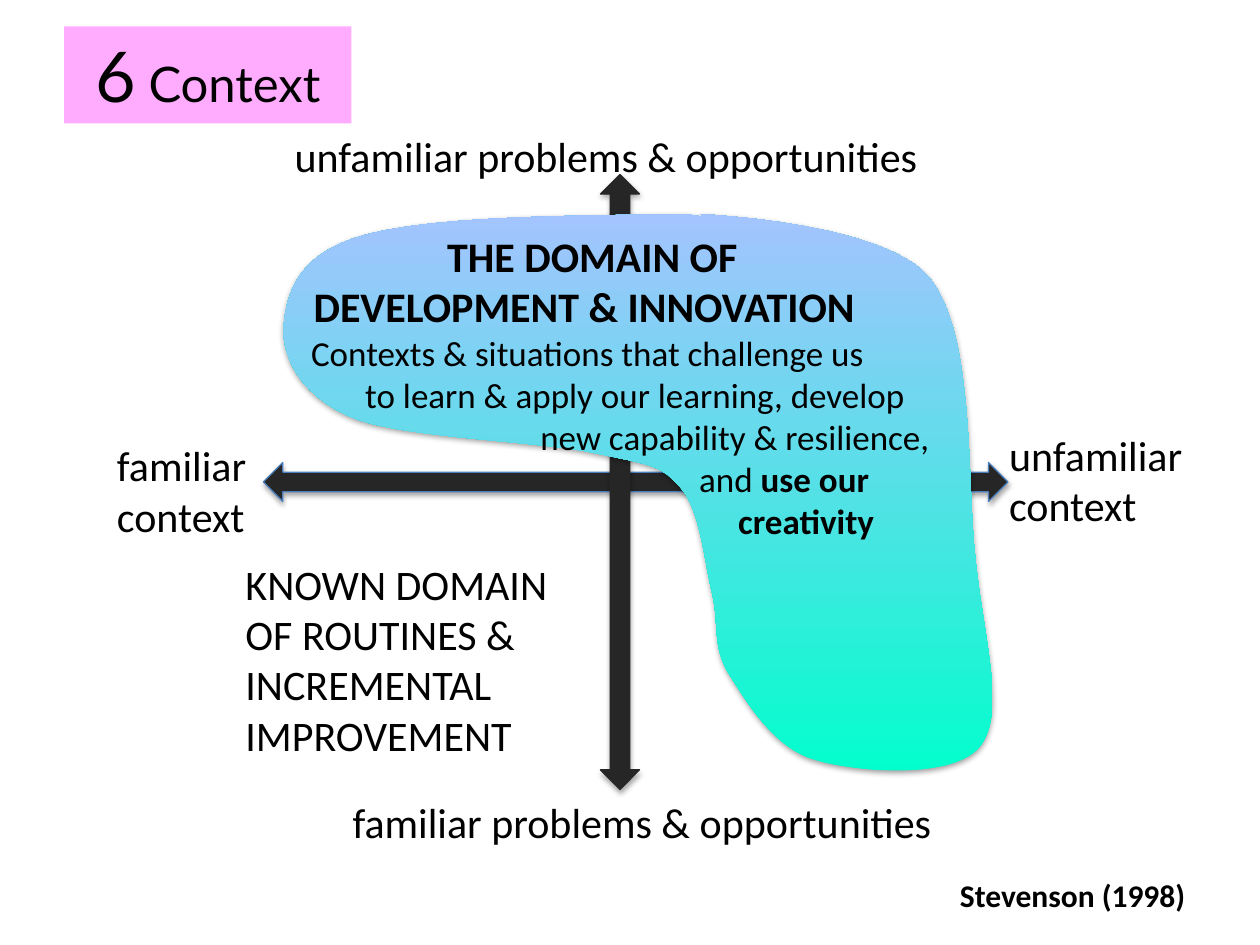
import pptx
import pptx.dml.color
import pptx.enum.shapes
import pptx.enum.text
import pptx.oxml
import pptx.oxml.ns
import pptx.util
from pptx.util import Inches

COLORS = {
    "text": "000000",
    "arrow": "262626",
    "arrow_edge": "4B7EBC",
    "title": "FF66FF",
    "domain_bottom": "00FFCC",
    "domain_top": "A4C4FF",
}

DOMAIN_START = (5.45, 1.7)
DOMAIN_CURVES = [
    ((4.43, 1.71), (3.41, 1.72), (2.88, 1.87)),
    ((2.34, 2.02), (2.27, 2.36), (2.25, 2.6)),
    ((2.24, 2.84), (2.39, 3.15), (2.81, 3.32)),
    ((3.22, 3.48), (4.31, 3.5), (4.74, 3.6)),
    ((5.17, 3.69), (5.25, 3.69), (5.41, 3.88)),
    ((5.56, 4.06), (5.59, 4.46), (5.65, 4.7)),
    ((5.71, 4.95), (5.65, 5.12), (5.78, 5.34)),
    ((5.92, 5.56), (6.14, 5.94), (6.47, 6.03)),
    ((6.8, 6.13), (7.57, 6.19), (7.78, 5.92)),
    ((7.99, 5.65), (7.8, 5.04), (7.74, 4.42)),
    ((7.67, 3.8), (7.74, 2.66), (7.38, 2.21)),
    ((7.02, 1.76), (5.56, 1.7), (5.56, 1.7)),
]
DOMAIN_TAIL = [(5.56, 1.7), (5.58, 1.72)]

DOMAIN_LINES = [
    (1.21, 24, [("THE DOMAIN OF", True)]),
    (0.15, 24, [("DEVELOPMENT & INNOVATION", True)]),
    (0.13, 20, [("Contexts & situations that challenge us", False)]),
    (0.56, 20, [("to learn & apply our learning, develop", False)]),
    (1.95, 20, [("new capability & resilience,", False)]),
    (3.21, 20, [("and ", False), ("use our", True)]),
    (3.52, 20, [("creativity", True)]),
]


def rgb(name):
    return pptx.dml.color.RGBColor.from_string(COLORS[name])


def add_run(paragraph, text, size=24, font="Calibri", bold=False, color="text"):
    run = paragraph.add_run()
    run.text = text
    run.font.size = pptx.util.Pt(size)
    run.font.name = font
    run.font.bold = bold
    run.font.color.rgb = rgb(color)


def bend_segments(shape, curve_count):
    segments = list(shape._element.iter(pptx.oxml.ns.qn("a:lnTo")))
    for index in range(0, 3 * curve_count, 3):
        first, *others = segments[index:index + 3]
        curve = pptx.oxml.parse_xml(f'<a:cubicBezTo {pptx.oxml.ns.nsdecls("a")}/>')
        first.addprevious(curve)
        for segment in (first, *others):
            curve.append(segment[0])
            segment.getparent().remove(segment)


class SlideBuilder:
    def __init__(self, slide):
        self.slide = slide

    def shadow(self, shape, opacity, distance):
        shape.shadow.inherit = False
        effects = shape._element.spPr.find(pptx.oxml.ns.qn("a:effectLst"))
        effects.append(pptx.oxml.parse_xml(
            f'<a:outerShdw {pptx.oxml.ns.nsdecls("a")} blurRad="{pptx.util.Pt(3.1)}" '
            f'dist="{pptx.util.Pt(distance)}" dir="5400000" rotWithShape="0">'
            f'<a:srgbClr val="000000"><a:alpha val="{opacity * 1000}"/></a:srgbClr>'
            "</a:outerShdw>"))

    def axis(self, left, width, edge, rotation=0):
        shape = self.slide.shapes.add_shape(
            pptx.enum.shapes.MSO_SHAPE.LEFT_RIGHT_ARROW,
            Inches(left), Inches(3.67), Inches(width), Inches(0.31))
        shape.rotation = rotation
        shape.fill.solid()
        shape.fill.fore_color.rgb = rgb("arrow")
        shape.line.color.rgb = rgb(edge)
        shape.line.width = pptx.util.Pt(0.75)
        self.shadow(shape, 35, 1.8)

    def text_frame(self, left, top, width, height, wrap=True):
        box = self.slide.shapes.add_textbox(
            Inches(left), Inches(top), Inches(width), Inches(height))
        box.text_frame.word_wrap = wrap
        return box.text_frame

    def text(self, left, top, width, height, lines, wrap=True, **style):
        frame = self.text_frame(left, top, width, height, wrap)
        for index, line in enumerate(lines):
            paragraph = frame.add_paragraph() if index else frame.paragraphs[0]
            add_run(paragraph, line, **style)

    def indented_text(self, left, top, width, height, lines):
        frame = self.text_frame(left, top, width, height)
        for index, (indent, size, runs) in enumerate(lines):
            paragraph = frame.add_paragraph() if index else frame.paragraphs[0]
            paragraph._p.get_or_add_pPr().set("marL", str(Inches(indent)))
            for text, bold in runs:
                add_run(paragraph, text, size=size, bold=bold)

    def domain(self, start, curves, tail):
        points = [point for curve in curves for point in curve] + tail
        builder = self.slide.shapes.build_freeform(*map(Inches, start))
        builder.add_line_segments(
            [tuple(map(Inches, point)) for point in points], close=False)
        shape = builder.convert_to_shape()
        bend_segments(shape, len(curves))
        shape.fill.gradient()
        shape.fill.gradient_angle = 90
        for stop, name in zip(shape.fill.gradient_stops, ("domain_bottom", "domain_top")):
            stop.color.rgb = rgb(name)
        shape.line.fill.background()
        self.shadow(shape, 38, 1.6)

    def title(self, left, top, width, height, number, label):
        shape = self.slide.shapes.add_shape(
            pptx.enum.shapes.MSO_SHAPE.RECTANGLE,
            Inches(left), Inches(top), Inches(width), Inches(height))
        shape.shadow.inherit = False
        shape.fill.solid()
        shape.fill.fore_color.rgb = rgb("title")
        color = shape._element.spPr.find(".//" + pptx.oxml.ns.qn("a:srgbClr"))
        color.append(pptx.oxml.parse_xml(
            f'<a:alpha {pptx.oxml.ns.nsdecls("a")} val="54000"/>'))
        shape.line.fill.background()
        shape.text_frame.vertical_anchor = pptx.enum.text.MSO_ANCHOR.MIDDLE
        paragraph = shape.text_frame.paragraphs[0]
        paragraph.alignment = pptx.enum.text.PP_ALIGN.CENTER
        add_run(paragraph, number, size=40, font="Lato")
        add_run(paragraph, label, size=28, font="Lato")


def main():
    presentation = pptx.Presentation()
    presentation.slide_width = Inches(10)
    presentation.slide_height = Inches(7.5)
    builder = SlideBuilder(presentation.slides.add_slide(presentation.slide_layouts[6]))

    builder.axis(2.09, 5.91, "arrow_edge")
    builder.axis(2.48, 4.88, "arrow", rotation=90)
    builder.text(2.24, 0.99, 6.14, 0.51, ["unfamiliar problems & opportunities"])
    builder.text(0.83, 3.44, 2.68, 0.91, ["familiar", "context"])
    builder.text(7.91, 3.36, 2.68, 0.91, ["unfamiliar", "context"])
    builder.text(1.85, 4.38, 2.76, 1.72, [
        "KNOWN DOMAIN", "OF ROUTINES &", "INCREMENTAL", "IMPROVEMENT"])
    builder.domain(DOMAIN_START, DOMAIN_CURVES, DOMAIN_TAIL)
    builder.indented_text(2.24, 1.78, 5.75, 2.93, DOMAIN_LINES)
    builder.text(2.7, 6.27, 5.84, 0.51, ["familiar problems & opportunities"])
    builder.title(0.51, 0.21, 2.28, 0.77, "6", " Context")
    builder.text(7.52, 6.9, 2.12, 0.4, ["Stevenson (1998)"], wrap=False, size=18, bold=True)

    presentation.save("out.pptx")


if __name__ == "__main__":
    main()
